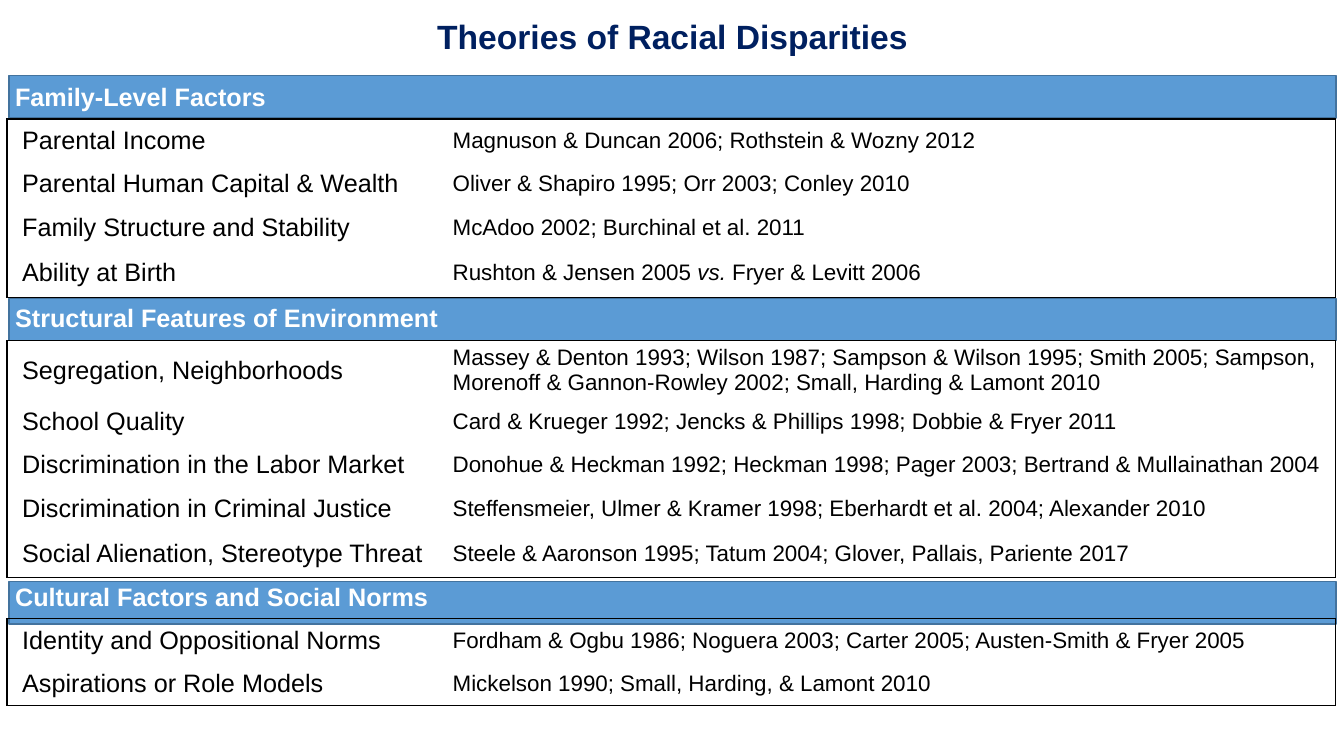
from dataclasses import dataclass

from lxml.etree import SubElement
from pptx import Presentation
from pptx.dml.color import RGBColor as Rgb
from pptx.enum.shapes import MSO_SHAPE as Shape
from pptx.enum.text import MSO_ANCHOR as Anchor, PP_ALIGN as Align
from pptx.oxml.ns import qn
from pptx.util import Pt

SCALE = 9144  # EMU in one px, 100 px to the inch


@dataclass(frozen=True)
class Theme:
    font: str = "Arial"
    title: str = "002060"
    text: str = "000000"
    header: str = "FFFFFF"
    bar: str = "5B9BD5"
    bar_line: str = "43739E"
    border: str = "000000"
    title_size: int = 24
    label_size: int = 18
    source_size: int = 16


THEME = Theme()
COLUMNS = (434, 884)
TABLE_LEFT, TABLE_TOP = 7, 75
BAR_LEFT, BAR_WIDTH, BAR_HEIGHT = 9, 1316, 42
PAD, INDENT = 8, 15

# (heading, bar top, heading height, [(factor, sources, row height)]); *...* is italic
SECTIONS = [
    ("Family-Level Factors", 75, 43, [
        ("Parental Income", "Magnuson & Duncan 2006; Rothstein & Wozny 2012", 43),
        ("Parental Human Capital & Wealth", "Oliver & Shapiro 1995; Orr 2003; Conley 2010", 43),
        ("Family Structure and Stability", "McAdoo 2002; Burchinal et al. 2011", 43),
        ("Ability at Birth", "Rushton & Jensen 2005 *vs.* Fryer & Levitt 2006", 48),
    ]),
    ("Structural Features of Environment", 296, 43, [
        ("Segregation, Neighborhoods",
         "Massey & Denton 1993; Wilson 1987; Sampson & Wilson 1995; Smith 2005; Sampson, "
         "Morenoff & Gannon-Rowley 2002; Small, Harding & Lamont 2010", 59),
        ("School Quality", "Card & Krueger 1992; Jencks & Phillips 1998; Dobbie & Fryer 2011", 43),
        ("Discrimination in the Labor Market",
         "Donohue & Heckman 1992; Heckman 1998; Pager 2003; Bertrand & Mullainathan 2004", 43),
        ("Discrimination in Criminal Justice",
         "Steffensmeier, Ulmer & Kramer 1998; Eberhardt et al. 2004; Alexander 2010", 43),
        ("Social Alienation, Stereotype Threat",
         "Steele & Aaronson 1995; Tatum 2004; Glover, Pallais, Pariente 2017", 47),
    ]),
    ("Cultural Factors and Social Norms", 577, 41, [
        ("Identity and Oppositional Norms",
         "Fordham & Ogbu 1986; Noguera 2003; Carter 2005; Austen-Smith & Fryer 2005", 43),
        ("Aspirations or Role Models", "Mickelson 1990; Small, Harding, & Lamont 2010", 43),
    ]),
]


def px(*lengths):
    return [length * SCALE for length in lengths]


def set_values(target, values):
    for name, value in values.items():
        setattr(target, name, value)


def write_text(para, text, size, color, bold=False):
    for index, part in enumerate(text.split("*")):
        span = para.add_run()
        span.text = part
        set_values(span.font, {"name": THEME.font, "size": Pt(size),
                               "bold": bold, "italic": index % 2 == 1})
        span.font.color.rgb = Rgb.from_string(color)


def add_title(page, text):
    box = page.shapes.title
    left, top, width, height = px(167, -4, 1000, 79)
    set_values(box, {"left": left, "top": top, "width": width, "height": height})
    set_values(box.text_frame, {"vertical_anchor": Anchor.MIDDLE, "word_wrap": True})
    para = box.text_frame.paragraphs[0]
    para.alignment = Align.CENTER
    write_text(para, text, THEME.title_size, THEME.title, bold=True)


def add_bar(page, top):
    bar = page.shapes.add_shape(Shape.RECTANGLE, *px(BAR_LEFT, top, BAR_WIDTH, BAR_HEIGHT))
    bar.shadow.inherit = False
    bar.fill.solid()
    bar.fill.fore_color.rgb = Rgb.from_string(THEME.bar)
    bar.line.color.rgb = Rgb.from_string(THEME.bar_line)
    bar.line.width = Pt(1)


def set_borders(cell, sides):
    """Draw the named sides (from L, R, T, B) and clear the others."""
    properties = cell._tc.get_or_add_tcPr()
    for side in "LRTB":
        line = SubElement(properties, qn(f"a:ln{side}"), w=str(Pt(1)))
        if side in sides:
            fill = SubElement(line, qn("a:solidFill"))
            SubElement(fill, qn("a:srgbClr"), val=THEME.border)
        else:
            SubElement(line, qn("a:noFill"))


def fill_cell(cell, text, size, color, sides, bold=False, left=PAD):
    set_borders(cell, sides)
    cell.fill.background()
    pad_left, pad_right, pad_edge = px(left, PAD, 4)
    set_values(cell, {"margin_left": pad_left, "margin_right": pad_right,
                      "margin_top": pad_edge, "margin_bottom": pad_edge,
                      "vertical_anchor": Anchor.MIDDLE})
    write_text(cell.text_frame.paragraphs[0], text, size, color, bold)


def add_heading_row(grid, row, text):
    sides = "B" if row == 0 else "TB"
    grid.cell(row, 0).merge(grid.cell(row, 1))
    set_borders(grid.cell(row, 1), sides)
    fill_cell(grid.cell(row, 0), text, THEME.label_size, THEME.header, sides, bold=True)


def add_factor_row(grid, row, factor, sources, edges):
    fill_cell(grid.cell(row, 0), factor, THEME.label_size, THEME.text,
              "L" + edges, left=INDENT)
    fill_cell(grid.cell(row, 1), sources, THEME.source_size, THEME.text, "R" + edges)


def add_theory_table(page):
    heights = []
    for _, _, heading_height, factors in SECTIONS:
        heights += [heading_height] + [height for _, _, height in factors]
    frame = page.shapes.add_table(len(heights), len(COLUMNS),
                                  *px(TABLE_LEFT, TABLE_TOP, sum(COLUMNS), sum(heights)))
    grid = frame.table
    set_values(grid, {"first_row": False, "horz_banding": False})
    for column, width in zip(grid.columns, px(*COLUMNS)):
        column.width = width
    for line, height in zip(grid.rows, px(*heights)):
        line.height = height

    row = 0
    for heading, _, _, factors in SECTIONS:
        add_heading_row(grid, row, heading)
        for index, (factor, sources, _) in enumerate(factors):
            edges = ("T" if index == 0 else "") + ("B" if index == len(factors) - 1 else "")
            add_factor_row(grid, row + 1 + index, factor, sources, edges)
        row += 1 + len(factors)


def main():
    deck = Presentation()
    deck.slide_width, deck.slide_height = px(1333, 750)
    page = deck.slides.add_slide(deck.slide_layouts[5])

    # Heading bars lie behind the table
    for _, bar_top, _, _ in SECTIONS:
        add_bar(page, bar_top)
    add_title(page, "Theories of Racial Disparities")
    add_theory_table(page)
    deck.save("out.pptx")


if __name__ == "__main__":
    main()
